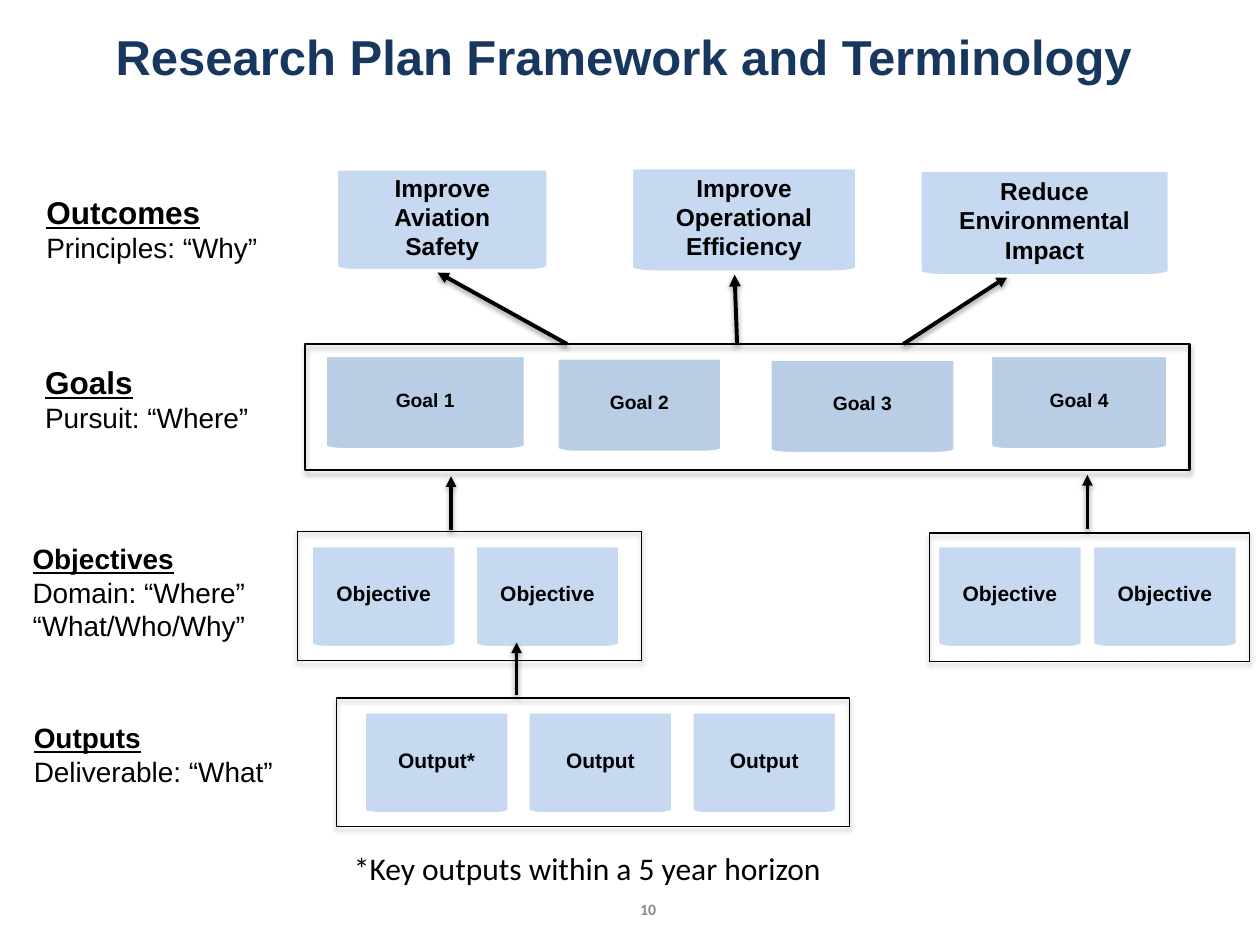
from math import cos, pi, sin

from lxml.etree import SubElement
from pptx import Presentation
from pptx.dml.color import RGBColor
from pptx.enum.shapes import MSO_CONNECTOR, MSO_SHAPE
from pptx.enum.text import MSO_ANCHOR, PP_ALIGN
from pptx.oxml.ns import qn
from pptx.util import Inches, Pt

COLORS = {
    "title": "17375E",
    "ink": "000000",
    "pale": "C6D9F1",
    "goal": "B9CDE5",
    "edge": "FFFFFF",
    "number": "898989",
}


class FrameworkSlide:
    """Holds the style and the current slide, and draws each kind of element."""

    def __init__(self, slide, font="Arial"):
        self.slide = slide
        self.shapes = slide.shapes
        self.font = font

    def color(self, name):
        return RGBColor.from_string(COLORS[name])

    def style(self, paragraph, size, color="ink", bold=False, underline=False, font=None):
        paragraph.font.name = font or self.font
        paragraph.font.size = Pt(size)
        paragraph.font.bold = bold
        paragraph.font.underline = underline
        paragraph.font.color.rgb = self.color(color)

    def add_shadow(self, shape, distance, opacity):
        effects = SubElement(shape._element.spPr, qn("a:effectLst"))
        shadow = SubElement(effects, qn("a:outerShdw"), blurRad=str(Pt(3.1)),
                            dist=str(Pt(distance)), dir="5400000", rotWithShape="0")
        tint = SubElement(shadow, qn("a:srgbClr"), val=COLORS["ink"])
        SubElement(tint, qn("a:alpha"), val=str(opacity * 1000))

    def text(self, left, top, width, height, content, size, color="ink", bold=False,
             font=None, centered=True, wrap=True):
        box = self.shapes.add_textbox(Inches(left), Inches(top), Inches(width), Inches(height))
        frame = box.text_frame
        frame.word_wrap = wrap
        frame.text = content
        if centered:
            frame.vertical_anchor = MSO_ANCHOR.MIDDLE
            frame.paragraphs[0].alignment = PP_ALIGN.CENTER
        self.style(frame.paragraphs[0], size, color, bold, font=font)

    def level(self, left, top, width, height, heading, meaning, heading_size):
        box = self.shapes.add_textbox(Inches(left), Inches(top), Inches(width), Inches(height))
        frame = box.text_frame
        frame.word_wrap = True
        frame.text = heading
        self.style(frame.paragraphs[0], heading_size, bold=True, underline=True)
        detail = frame.add_paragraph()
        detail.text = meaning
        self.style(detail, 16)

    def card(self, left, top, width, height, content, size, fill="pale", steps=6):
        radius_x, radius_y = 0.1 * width, 0.04 * height
        right, bottom = left + width, top + height
        angles = [pi / 2 * step / steps for step in range(steps + 1)]
        right_corner = [(right - radius_x * (1 - cos(a)), bottom - radius_y * (1 - sin(a)))
                        for a in angles]
        left_corner = [(left + right - x, y) for x, y in reversed(right_corner)]
        outline = [(right, top)] + right_corner + left_corner
        builder = self.shapes.build_freeform(Inches(left), Inches(top))
        builder.add_line_segments([(Inches(x), Inches(y)) for x, y in outline])
        card = builder.convert_to_shape()
        card.shadow.inherit = False
        card.fill.solid()
        card.fill.fore_color.rgb = self.color(fill)
        card.line.color.rgb = self.color("edge")
        card.line.width = Pt(2)
        frame = card.text_frame
        frame.word_wrap = True
        frame.vertical_anchor = MSO_ANCHOR.MIDDLE
        frame.margin_left = frame.margin_right = frame.margin_bottom = Inches(0.16)
        frame.margin_top = Inches(0.11)
        frame.text = content
        frame.paragraphs[0].alignment = PP_ALIGN.CENTER
        self.style(frame.paragraphs[0], size, bold=True)

    def group_frame(self, left, top, width, height, weight=0.75):
        frame = self.shapes.add_shape(MSO_SHAPE.RECTANGLE, Inches(left), Inches(top),
                                      Inches(width), Inches(height))
        frame.fill.background()
        frame.line.color.rgb = self.color("ink")
        frame.line.width = Pt(weight)
        self.add_shadow(frame, 1.8, 35)

    def arrow(self, start_x, start_y, end_x, end_y, weight):
        arrow = self.shapes.add_connector(MSO_CONNECTOR.STRAIGHT, Inches(start_x),
                                          Inches(start_y), Inches(end_x), Inches(end_y))
        arrow.line.color.rgb = self.color("ink")
        arrow.line.width = Pt(weight)
        SubElement(arrow.line._get_or_add_ln(), qn("a:tailEnd"), type="triangle")
        self.add_shadow(arrow, 1.6, 38)


def main():
    presentation = Presentation()
    presentation.slide_width = Inches(10)
    presentation.slide_height = Inches(7.5)
    page = FrameworkSlide(presentation.slides.add_slide(presentation.slide_layouts[6]))

    for start_x, end_x, end_y in [(4.5, 3.47, 2.16), (5.85, 5.83, 2.18), (7.17, 8, 2.19)]:
        page.arrow(start_x, 2.73, end_x, end_y, 2.25)

    page.text(-0.05, 0.08, 10, 0.72, "Research Plan Framework and Terminology", 28,
              "title", bold=True)

    for level in [
        (0.27, 1.48, 2.27, 0.67, "Outcomes", "Principles: “Why”", 18),
        (0.26, 2.83, 1.88, 0.67, "Goals", "Pursuit: “Where”", 18),
        (0.16, 4.25, 2.09, 1.18, "Objectives", "Domain: “Where” “What/Who/Why”", 16),
        (0.17, 5.67, 2.25, 0.91, "Outputs", "Deliverable: “What”", 16),
    ]:
        page.level(*level)

    page.group_frame(2.42, 2.73, 7.02, 1, 1.25)
    for left, top, width in [(2.36, 4.22, 2.73), (7.38, 4.23, 2.54), (2.67, 5.54, 4.07)]:
        page.group_frame(left, top, width, 1.02)

    for left, top, width, height, outcome in [
        (2.67, 1.34, 1.68, 0.81, "Improve Aviation Safety"),
        (5.01, 1.33, 1.79, 0.83, "Improve Operational Efficiency"),
        (7.3, 1.35, 1.98, 0.84, "Reduce Environmental Impact"),
    ]:
        page.card(left, top, width, height, outcome, 14)

    goals = [(2.58, 2.82, 1.59), (4.42, 2.84, 1.31), (6.11, 2.85, 1.47), (7.86, 2.82, 1.41)]
    for number, (left, top, width) in enumerate(goals, 1):
        page.card(left, top, width, 0.75, f"Goal {number}", 11, "goal")

    for left in (2.47, 3.77, 7.44, 8.67):
        page.card(left, 4.33, 1.15, 0.81, "Objective", 12)

    for index, output in enumerate(["Output*", "Output", "Output"]):
        page.card(2.89 + 1.3 * index, 5.65, 1.15, 0.81, output, 12)

    for x, start_y, end_y in [(3.58, 4.21, 3.78), (8.63, 4.2, 3.77), (4.1, 5.52, 5.1)]:
        page.arrow(x, start_y, x, end_y, 2)

    page.text(2.71, 6.69, 4.08, 0.4, "*Key outputs within a 5 year horizon", 18,
              font="Calibri", centered=False, wrap=False)
    page.text(3.98, 7.09, 2.33, 0.26, "10", 9, "number", bold=True, font="Calibri")

    presentation.save("out.pptx")


if __name__ == "__main__":
    main()
